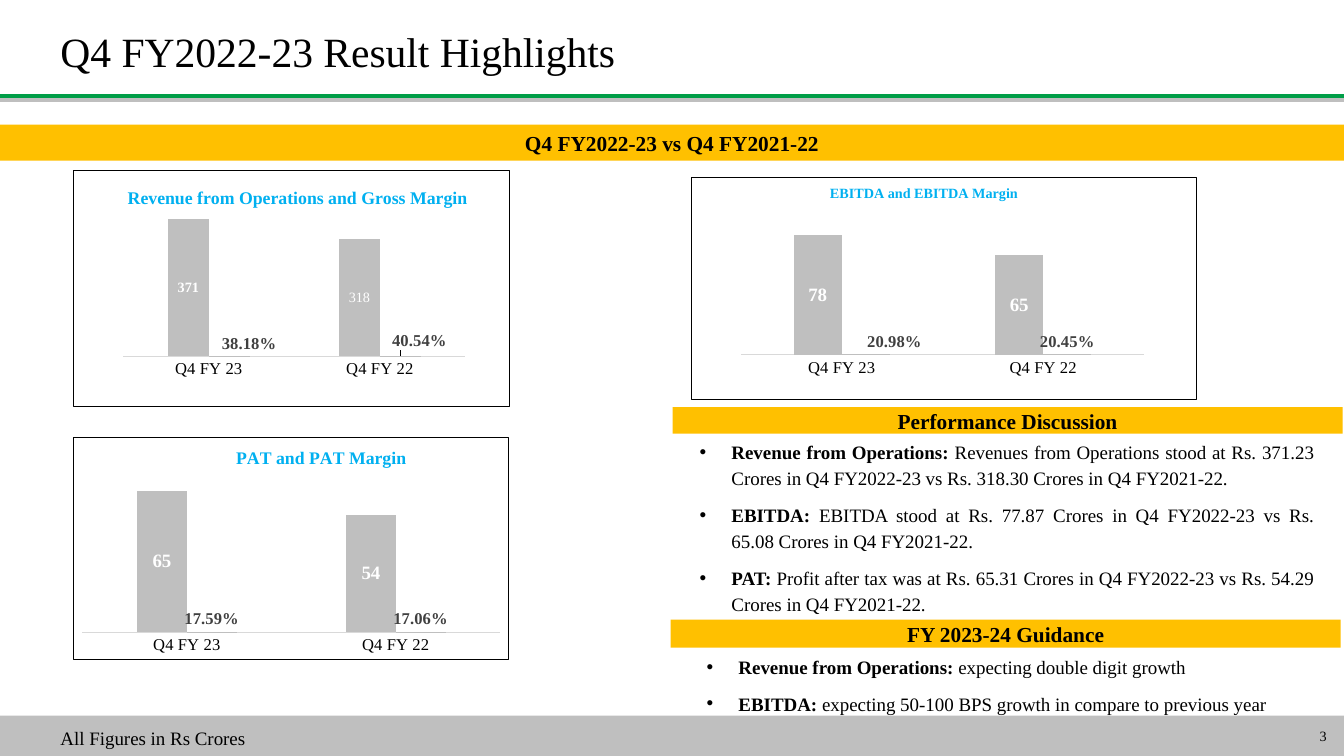
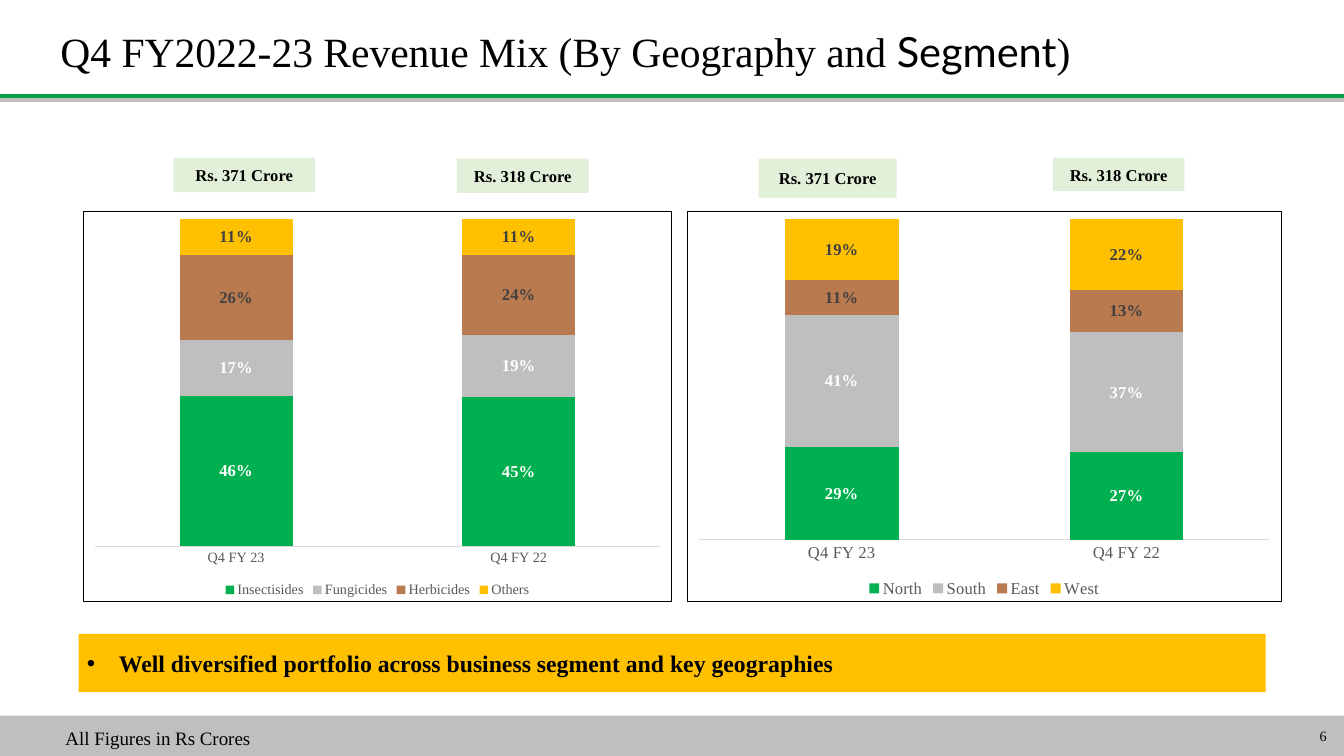
from lxml.etree import SubElement
from pptx import Presentation
from pptx.chart.data import CategoryChartData
from pptx.enum.chart import XL_CHART_TYPE as ChartType
from pptx.enum.chart import XL_LABEL_POSITION as LabelAt
from pptx.enum.chart import XL_LEGEND_POSITION as LegendAt
from pptx.enum.chart import XL_TICK_MARK as Tick
from pptx.enum.shapes import MSO_CONNECTOR, MSO_SHAPE
from pptx.enum.text import MSO_ANCHOR as Anchor
from pptx.enum.text import PP_ALIGN as Align
from pptx.dml.color import RGBColor
from pptx.oxml import parse_xml
from pptx.oxml.ns import nsdecls, qn
from pptx.util import Cm, Pt

SERIF, SANS = "Times New Roman", "Lato"
BLACK, WHITE, DARK, MUTED = "000000", "FFFFFF", "404040", "595959"
GREEN, GREY, AMBER, BROWN = "00B050", "BFBFBF", "FFC000", "B97A50"
RULE_GREEN, PALE_GREEN, SKY, AXIS = "009E47", "E2F0D9", "00B0F0", "D9D9D9"
WIDTH, HEIGHT = 40, 22.5


def paint(fill, colour):
    fill.solid()
    fill.fore_color.rgb = RGBColor.from_string(colour)


def add_text(slide, box, paragraphs, size, fill=None, align=Align.LEFT,
             anchor=Anchor.MIDDLE, bullet=False, leading=None, after=0):
    """Add a text box, or a band if there is a fill; runs are (words, bold[, face])."""
    place = [Cm(length) for length in box]
    if fill:
        holder = slide.shapes.add_shape(MSO_SHAPE.RECTANGLE, *place)
        holder.shadow.inherit = False
        paint(holder.fill, fill)
        holder.line.fill.background()
    else:
        holder = slide.shapes.add_textbox(*place)
    frame = holder.text_frame
    frame.word_wrap = True
    frame.vertical_anchor = anchor
    for index, runs in enumerate(paragraphs):
        paragraph = frame.add_paragraph() if index else frame.paragraphs[0]
        if bullet:
            properties = paragraph._p.get_or_add_pPr()
            properties.set("marL", str(Cm(0.95)))
            properties.set("indent", str(-Cm(0.95)))
            SubElement(properties, qn("a:buFont"), typeface="Arial")
            SubElement(properties, qn("a:buChar"), char="•")
        paragraph.alignment = align
        paragraph.line_spacing = leading
        paragraph.space_after = Pt(after)
        for words, bold, *face in runs:
            run = paragraph.add_run()
            run.text = words
            run.font.name = face[0] if face else SERIF
            run.font.size, run.font.bold = Pt(size), bold
            paint(run.font.fill, BLACK)
    return frame


prs = Presentation()
prs.slide_width, prs.slide_height = Cm(WIDTH), Cm(HEIGHT)

# Shared frame: rules, title, footer
pages = [
    ("3", (1.55, 21.51), [("Q4 FY2022-23 Result Highlights", False)]),
    ("6", (1.7, 21.49), [("Q4 FY2022-23 Revenue Mix (By Geography and ", False),
                         ("Segment", False, SANS), (")", False)]),
]
for number, note_corner, title in pages:
    slide = prs.slides.add_slide(prs.slide_layouts[6])
    for y, colour, weight in [(2.87, RULE_GREEN, 4.5), (2.97, GREY, 3)]:
        rule = slide.shapes.add_connector(
            MSO_CONNECTOR.STRAIGHT, 0, Cm(y), Cm(WIDTH), Cm(y))
        paint(rule.line.fill, colour)
        rule.line.width = Pt(weight)
        SubElement(rule._element.spPr, qn("a:effectLst"))
    footer = add_text(slide, (0, 21.3, WIDTH, 1.2), [[(number, False)]], 12, GREY, Align.RIGHT)
    footer.margin_right = Cm(0.51)
    add_text(slide, (1.55, 0.51, 34.57, 2.18), [title], 35.1, leading=0.9)
    add_text(slide, (*note_corner, 6.5, 0.94), [[("All Figures in Rs Crores", False)]], 16,
             anchor=Anchor.TOP)
results, mix = prs.slides

# Headings and tags
bands = [
    (results, (0, 3.71, WIDTH, 1.07), "Q4 FY2022-23 vs Q4 FY2021-22", 18, AMBER),
    (results, (20.02, 12.12, 19.94, 0.79), "Performance Discussion", 18, AMBER),
    (results, (19.96, 18.44, 19.94, 0.84), "FY 2023-24 Guidance", 18, AMBER),
    (mix, (5.16, 4.7, 4.22, 1.02), "Rs. 371 Crore", 14, PALE_GREEN),
    (mix, (13.59, 4.72, 3.94, 1.02), "Rs. 318 Crore", 14, PALE_GREEN),
    (mix, (22.58, 4.72, 4.11, 1.17), "Rs. 371 Crore", 14, PALE_GREEN),
    (mix, (31.34, 4.7, 3.91, 0.99), "Rs. 318 Crore", 14, PALE_GREEN),
]
for slide, box, words, size, fill in bands:
    add_text(slide, box, [[(words, True)]], size, fill, Align.CENTER)

# Commentary
discussion = [
    ("Revenue from Operations: ", "Revenues from Operations stood at Rs. 371.23 Crores "
     "in Q4 FY2022-23 vs Rs. 318.30 Crores in Q4 FY2021-22."),
    ("EBITDA: ", "EBITDA stood at Rs. 77.87 Crores in Q4 FY2022-23 vs Rs. 65.08 Crores "
     "in Q4 FY2021-22."),
    ("PAT: ", "Profit after tax was at Rs. 65.31 Crores in Q4 FY2022-23 vs Rs. 54.29 Crores "
     "in Q4 FY2021-22."),
]
guidance = [
    ("Revenue from Operations: ", "expecting double digit growth"),
    ("EBITDA: ", "expecting 50-100 BPS growth in compare to previous year"),
]
for box, points in [((20.57, 12.9, 18.8, 5.59), discussion),
                    ((20.78, 19.28, 18.8, 2.13), guidance)]:
    add_text(results, box, [[(lead, True), (detail, False)] for lead, detail in points], 16,
             align=Align.JUSTIFY, anchor=Anchor.TOP, bullet=True, leading=Pt(22), after=9)
add_text(mix, (2.34, 18.87, 35.33, 1.73),
         [[("Well diversified portfolio across business segment and key geographies", True)]],
         20, AMBER, bullet=True, after=3)

# Charts: a series is name, values, number format, fill, label size, label colour
margin = ("0.00%", GREY, 14, DARK)
mix_styles = [("0%", GREEN, 14, WHITE), ("0%", GREY, 14, WHITE),
              ("0%", BROWN, 14, DARK), ("0%", AMBER, 14, DARK)]
segments = [("Insectisides", (0.46, 0.45)), ("Fungicides", (0.17, 0.19)),
            ("Herbicides", (0.26, 0.24)), ("Others", (0.11, 0.11))]
regions = [("North", (0.29, 0.27)), ("South", (0.41, 0.37)),
           ("East", (0.11, 0.13)), ("West", (0.19, 0.22))]
charts = [
    dict(slide=results, box=(2.18, 5.05, 12.98, 7.06), border=0.5, axis_size=14, top=400,
         title=("Revenue from Operations and Gross Margin", 15, 0.117, 0.055),
         plot=(0.114, 0.162, 0.786, 0.625), shifts={0: (0.046, 0), 1: (0.044, -0.01)},
         series=[("Series 1", (371, 318), "General", GREY, 12, WHITE),
                 ("Series 2", (0.3818, 0.4054), *margin)]),
    dict(slide=results, box=(2.18, 13, 12.98, 6.63), border=0.75, axis_size=14, top=70,
         title=("PAT and PAT Margin", 15, 0.366, 0.027),
         plot=(0.02, 0.194, 0.96, 0.684), shifts={},
         series=[("Series 1", (65, 54), "General", GREY, 16, WHITE),
                 ("Series 2", (0.1759, 0.1706), *margin)]),
    dict(slide=results, box=(20.57, 5.26, 15.04, 6.63), border=0.75, axis_size=14, top=90,
         title=("EBITDA and EBITDA Margin", 12, 0.269, 0.02),
         plot=(0.098, 0.177, 0.799, 0.624), shifts={0: (0.057, 0)},
         series=[("Series 1", (78, 65), "General", GREY, 16, WHITE),
                 ("Series 2", (0.2098, 0.2045), *margin)]),
    dict(slide=mix, box=(2.46, 6.27, 17.55, 11.63), border=0.75, axis_size=12, top=None,
         title=None, plot=(0.02, 0.02, 0.96, 0.84), shifts={},
         series=[(*segment, *style) for segment, style in zip(segments, mix_styles)]),
    dict(slide=mix, box=(20.45, 6.27, 17.68, 11.63), border=0.5, axis_size=14, top=None,
         title=None, plot=(0.02, 0.02, 0.96, 0.823), shifts={},
         series=[(*region, *style) for region, style in zip(regions, mix_styles)]),
]
for spec_ in charts:
    stacked = spec_["title"] is None
    data = CategoryChartData()
    data.categories = ["Q4 FY 23", "Q4 FY 22"]
    for name, values, number_format, *_ in spec_["series"]:
        data.add_series(name, values, number_format)
    kind = ChartType.COLUMN_STACKED_100 if stacked else ChartType.COLUMN_CLUSTERED
    chart = spec_["slide"].shapes.add_chart(
        kind, *[Cm(length) for length in spec_["box"]], data).chart
    chart.font.name, chart.font.size = SERIF, Pt(10)
    paint(chart.font.fill, BLACK)
    space = chart._chartSpace
    space.find(qn("c:chart")).addnext(parse_xml(
        f'<c:spPr {nsdecls("c", "a")}>'
        f'<a:solidFill><a:srgbClr val="{WHITE}"/></a:solidFill>'
        f'<a:ln w="{Pt(spec_["border"])}"><a:solidFill><a:srgbClr val="{BLACK}"/>'
        '</a:solidFill></a:ln></c:spPr>'))

    plot = chart.plots[0]
    plot.vary_by_categories = False
    plot.gap_width, plot.overlap = (150, 100) if stacked else (219, 0)
    value_axis, category_axis = chart.value_axis, chart.category_axis
    value_axis.has_major_gridlines = False
    value_axis.visible = False
    value_axis.minimum_scale, value_axis.maximum_scale = 0, spec_["top"]
    category_axis.major_tick_mark = Tick.NONE
    paint(category_axis.format.line.fill, AXIS)
    category_axis.format.line.width = Pt(0.75)
    small_print = [category_axis.tick_labels.font]

    x, y, w, h = spec_["plot"]
    layouts = [(space.find(".//" + qn("c:plotArea")), 0,
                dict(layoutTarget="inner", xMode="edge", yMode="edge", x=x, y=y, w=w, h=h))]
    chart.has_title = not stacked
    chart.has_legend = stacked
    if stacked:
        chart.legend.position = LegendAt.BOTTOM
        chart.legend.include_in_layout = False
        small_print.append(chart.legend.font)
    else:
        words, size, x, y = spec_["title"]
        heading = chart.chart_title.text_frame.paragraphs[0].add_run()
        heading.text = words
        heading.font.name, heading.font.size, heading.font.bold = SERIF, Pt(size), True
        paint(heading.font.fill, SKY)
        layouts.append((space.find(".//" + qn("c:title")), 1,
                        dict(xMode="edge", yMode="edge", x=x, y=y)))
    for font in small_print:
        font.name, font.size = SERIF, Pt(spec_["axis_size"])
        paint(font.fill, MUTED if stacked else BLACK)

    for series, (name, values, number_format, fill, size, ink) in zip(
            plot.series, spec_["series"]):
        paint(series.format.fill, fill)
        is_margin = number_format == "0.00%"
        labels = series.data_labels
        labels.show_value = True
        labels.number_format, labels.number_format_is_linked = number_format, False
        label_sets = [(labels, True)]
        if is_margin:
            label_sets += [(series.points[i].data_label, True) for i in spec_["shifts"]]
        elif values == (371, 318):
            label_sets.append((series.points[1].data_label, False))
        for label, bold in label_sets:
            label.position = LabelAt.OUTSIDE_END if is_margin else LabelAt.CENTER
            label.font.name, label.font.size, label.font.bold = SERIF, Pt(size), bold
            paint(label.font.fill, ink)
        if is_margin:
            moved = series._element.findall(".//" + qn("c:dLbl"))
            for label, (x, y) in zip(moved, spec_["shifts"].values()):
                label.insert(1, parse_xml(
                    f'<c:numFmt {nsdecls("c")} formatCode="{number_format}" sourceLinked="0"/>'))
                layouts.append((label, 1, dict(x=x, y=y)))

    for parent, index, entries in layouts:
        layout = parent.find(qn("c:layout"))
        if layout is None:
            layout = parse_xml(f'<c:layout {nsdecls("c")}/>')
            parent.insert(index, layout)
        manual = SubElement(layout, qn("c:manualLayout"))
        for tag, value in entries.items():
            SubElement(manual, qn("c:" + tag), val=str(value))

prs.save("out.pptx")
